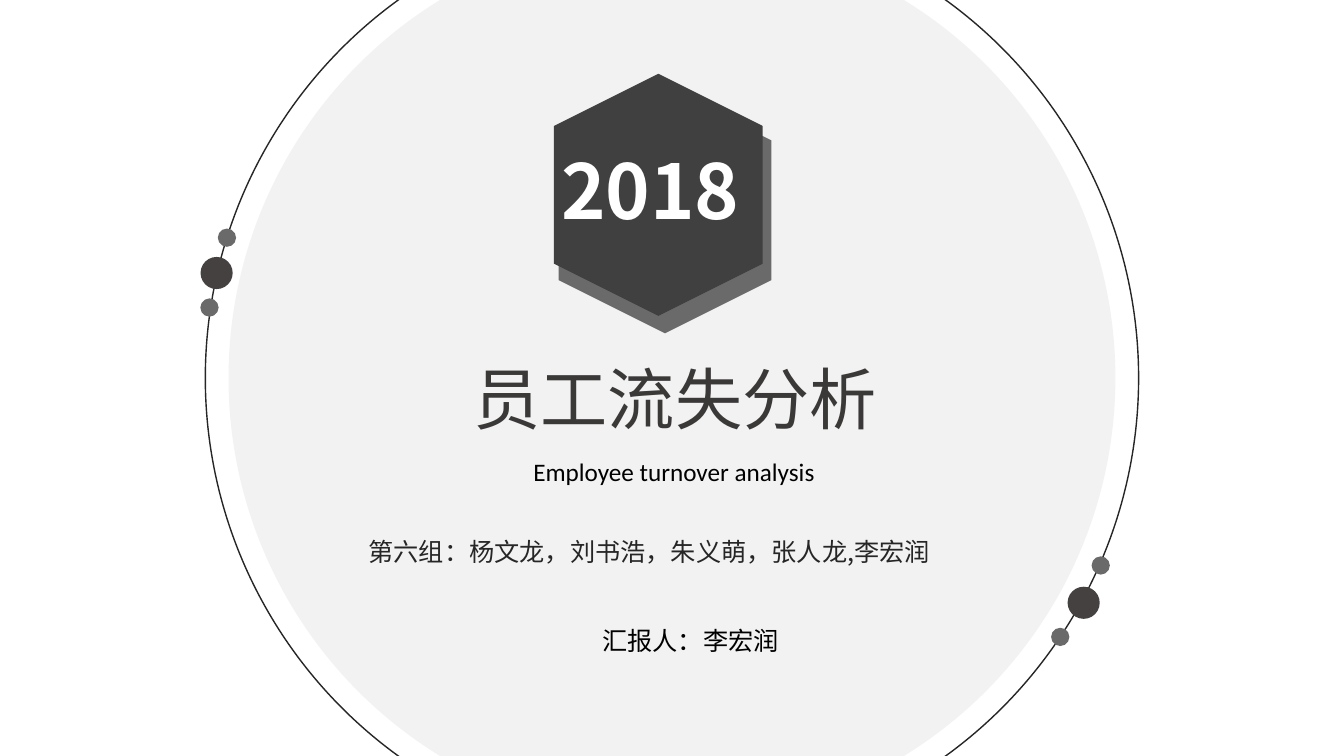
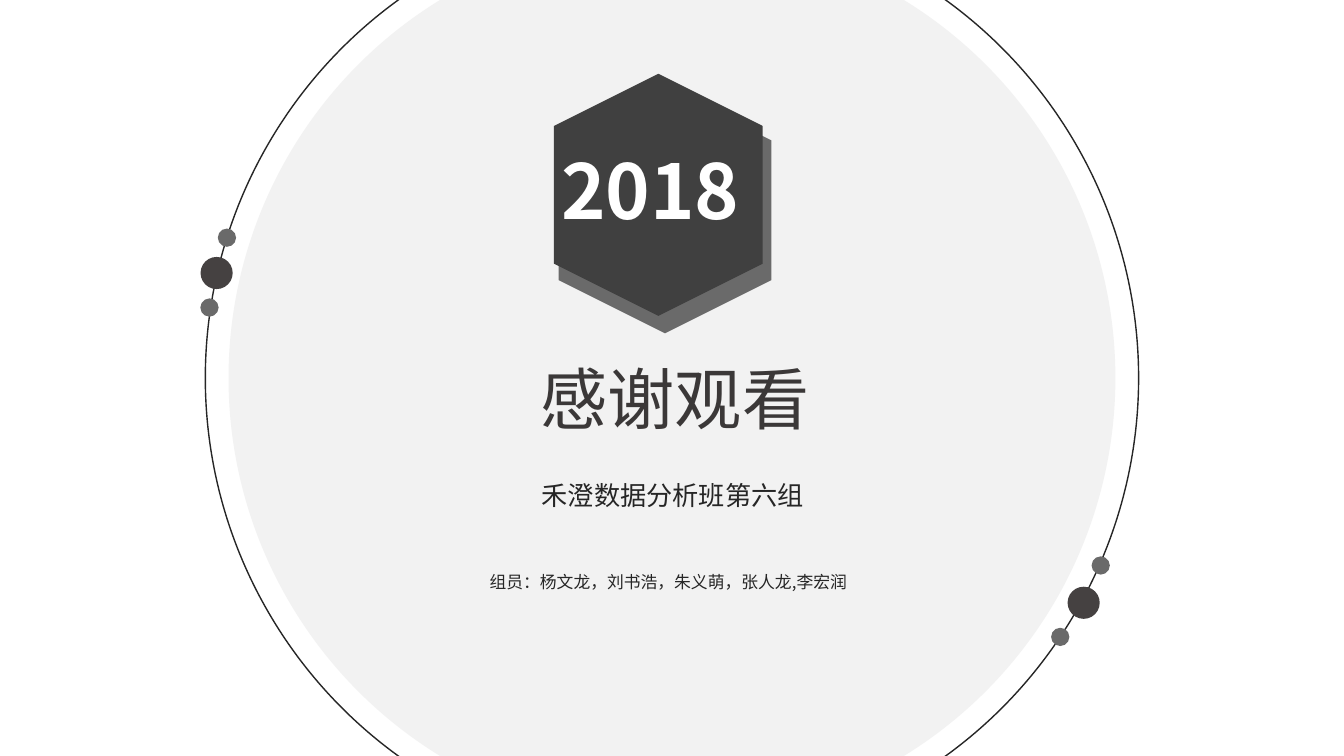
from dataclasses import dataclass

from lxml import etree
from pptx import Presentation
from pptx.dml.color import RGBColor
from pptx.enum.shapes import MSO_SHAPE
from pptx.enum.text import MSO_AUTO_SIZE, PP_ALIGN
from pptx.oxml.ns import qn
from pptx.util import Cm, Pt

OVAL, HEXAGON = MSO_SHAPE.OVAL, MSO_SHAPE.HEXAGON
LEFT, CENTER, JUSTIFY = PP_ALIGN.LEFT, PP_ALIGN.CENTER, PP_ALIGN.JUSTIFY
GROW = MSO_AUTO_SIZE.SHAPE_TO_FIT_TEXT

SLIDE_W, SLIDE_H = 33.87, 19.05
MIDDLE = (SLIDE_W / 2, SLIDE_H / 2)


@dataclass(frozen=True)
class Theme:
    disc: str = "F2F2F2"
    ink: str = "262626"
    grey: str = "6A6A6A"
    dark_dot: str = "454141"
    badge: str = "404040"
    title: str = "3B3838"
    white: str = "FFFFFF"
    black: str = "000000"
    cjk: str = "Noto Sans CJK SC"
    title_font: str = "Noto Sans CJK JP"
    latin: str = "Calibri"
    year_size: float = 54
    title_size: float = 48
    closing_size: float = 18.7
    body_size: float = 18
    small_size: float = 12


T = Theme()

# Each bead: centre x, centre y, diameter, colour
SMALL, LARGE = (0.46, T.grey), (0.81, T.dark_dot)
BEADS = [
    (5.72, 5.99, *SMALL), (5.46, 6.88, *LARGE), (5.28, 7.75, *SMALL),
    (27.74, 14.25, *SMALL), (27.31, 15.19, *LARGE), (26.72, 16.05, *SMALL),
]

STYLES = {
    "year": dict(size=T.year_size, name=T.cjk, color=T.white, bold=True, align=LEFT, wrap=False),
    "title": dict(size=T.title_size, name=T.title_font, color=T.title, align=CENTER, wrap=False),
    "subtitle": dict(size=T.body_size, name=T.latin, color=T.black, align=CENTER),
    "closing": dict(size=T.closing_size, name=T.latin, color=T.ink, align=CENTER),
    "reporter": dict(size=T.body_size, name=T.cjk, color=T.black, align=CENTER),
    "group": dict(size=T.body_size, name=T.cjk, color=T.ink, align=JUSTIFY),
    "members": dict(size=T.small_size, name=T.cjk, color=T.ink, align=JUSTIFY),
}

SLIDES = [
    [
        ("员工流失分析", "title", (11.63, 8.89, 10.77, 2.31)),
        ("Employee turnover analysis", "subtitle", (6.05, 11.38, 21.87, 1.02)),
        ("第六组：杨文龙，刘书浩，朱义萌，张人龙,李宏润", "group", (9.04, 13.39, 15.82, 1.02)),
        ("汇报人：李宏润", "reporter", (12.09, 15.62, 10.62, 1.02)),
    ],
    [
        ("感谢观看", "title", (13.34, 8.89, 7.34, 2.31)),
        ("禾澄数据分析班第六组", "closing", (6.02, 11.96, 21.87, 1.07)),
        ("组员：杨文龙，刘书浩，朱义萌，张人龙,李宏润", "members", (12.09, 14.27, 10.62, 0.76)),
    ],
]


def add_centred(s, kind, cx, cy, w, h, fill=None, line=None, rotation=0):
    """Add a preset shape around its centre point, in centimetres."""
    sp = s.shapes.add_shape(kind, Cm(cx - w / 2), Cm(cy - h / 2), Cm(w), Cm(h))
    sp.shadow.inherit = False
    sp.rotation = rotation
    if fill:
        sp.fill.solid()
        sp.fill.fore_color.rgb = RGBColor.from_string(fill)
    else:
        sp.fill.background()
    if line:
        sp.line.color.rgb = RGBColor.from_string(line)
        sp.line.width = Pt(1)
    else:
        sp.line.fill.background()


def add_text(s, text, style, box):
    fmt = STYLES[style]
    tf = s.shapes.add_textbox(*map(Cm, box)).text_frame
    tf.word_wrap = fmt.get("wrap", True)
    tf.auto_size = GROW
    p = tf.paragraphs[0]
    p.alignment = fmt["align"]
    r = p.add_run()
    r.text = text
    font = {"size": Pt(fmt["size"]), "name": fmt["name"], "bold": fmt.get("bold", False)}
    for attr, value in font.items():
        setattr(r.font, attr, value)
    r.font.color.rgb = RGBColor.from_string(fmt["color"])
    east_asian = T.cjk if fmt["name"] == T.latin else fmt["name"]
    etree.SubElement(r.font._element, qn("a:ea")).set("typeface", east_asian)


def add_backdrop(s):
    """Draw the disc, the ring with its beads and the year badge."""
    add_centred(s, OVAL, *MIDDLE, 22.35, 22.35, fill=T.disc)
    add_centred(s, OVAL, *MIDDLE, 23.52, 23.52, line=T.ink)
    for cx, cy, size, color in BEADS:
        add_centred(s, OVAL, cx, cy, size, size, fill=color)
    add_centred(s, HEXAGON, 16.76, 5.3, 6.2, 5.36, fill=T.grey, rotation=90)
    add_centred(s, HEXAGON, 16.59, 4.91, 6.1, 5.26, fill=T.badge, rotation=90)
    add_text(s, "2018", "year", (13.89, 3.51, 5.26, 2.57))


def main():
    prs = Presentation()
    prs.slide_width, prs.slide_height = Cm(SLIDE_W), Cm(SLIDE_H)
    for texts in SLIDES:
        s = prs.slides.add_slide(prs.slide_layouts[6])
        add_backdrop(s)
        for text, style, box in texts:
            add_text(s, text, style, box)
    prs.save("out.pptx")


if __name__ == "__main__":
    main()
